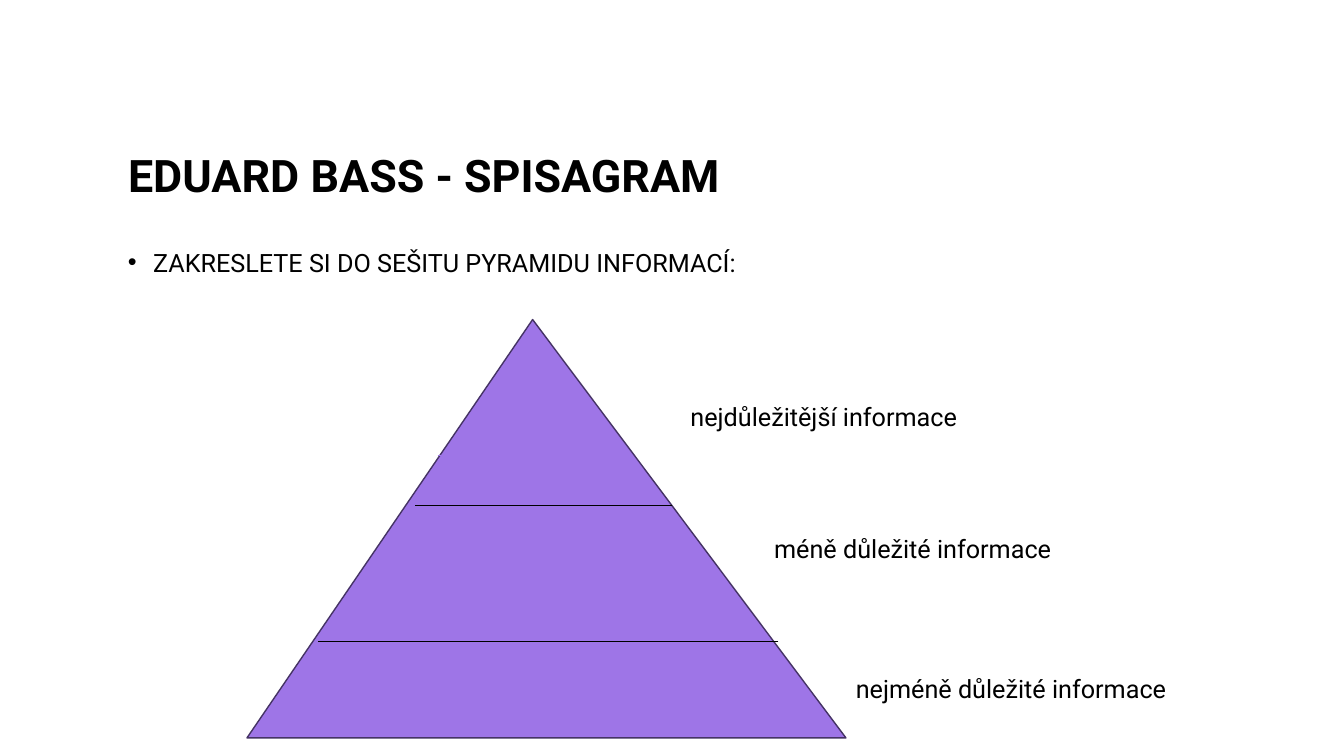
from dataclasses import dataclass

from lxml import etree
from pptx import Presentation
from pptx.dml.color import RGBColor
from pptx.enum import shapes, text
from pptx.oxml import ns
from pptx.util import Inches, Pt


@dataclass(frozen=True)
class Theme:
    font: str = "Roboto"
    ink: str = "000000"
    paper: str = "FFFFFF"
    purple: str = "9E75E7"
    outline: str = "453365"
    title_size: float = 32
    text_size: float = 18
    outline_width: float = 1
    divider_width: float = 0.5


THEME = Theme()


def place(shape, left, top, width, height):
    shape.left, shape.top = Inches(left), Inches(top)
    shape.width, shape.height = Inches(width), Inches(height)


def add_span(para, words, size, bold=False):
    span = para.add_run()
    span.text = words
    span.font.name = THEME.font
    span.font.size = Pt(size)
    span.font.bold = bold
    span.font.color.rgb = RGBColor.from_string(THEME.ink)


def set_title(page, words):
    title = page.shapes.title
    place(title, 1.17, 1.02, 9.72, 1.04)
    frame = title.text_frame
    frame.word_wrap = True
    frame.auto_size = text.MSO_AUTO_SIZE.NONE
    frame.vertical_anchor = text.MSO_ANCHOR.BOTTOM
    para = frame.paragraphs[0]
    para.alignment = text.PP_ALIGN.LEFT
    para.line_spacing = 0.9
    add_span(para, words, THEME.title_size, bold=True)


def add_text(page, words, left, top, width, height):
    box = page.shapes.add_textbox(*map(Inches, (left, top, width, height)))
    box.text_frame.word_wrap = True
    para = box.text_frame.paragraphs[0]
    add_span(para, words, THEME.text_size)
    return box


def add_task(page, words):
    box = add_text(page, words, 1.17, 2.34, 9.72, 4.02)
    para = box.text_frame.paragraphs[0]
    para.line_spacing = 1.2
    para.space_before = Pt(10)
    properties = para._p.get_or_add_pPr()
    properties.set("marL", str(Inches(0.25)))
    properties.set("indent", str(Inches(-0.25)))
    font = etree.SubElement(properties, ns.qn("a:buFont"))
    font.set("typeface", "Arial")
    bullet = etree.SubElement(properties, ns.qn("a:buChar"))
    bullet.set("char", "•")


def add_label(page, words, left, top):
    box = add_text(page, words, left, top, 3.56, 0.4)
    box.text_frame.auto_size = text.MSO_AUTO_SIZE.SHAPE_TO_FIT_TEXT


def add_pyramid(page):
    pyramid = page.shapes.add_shape(
        shapes.MSO_SHAPE.ISOSCELES_TRIANGLE,
        *map(Inches, (2.45, 3.17, 5.94, 4.15)))
    pyramid.adjustments[0] = 0.477
    pyramid.shadow.inherit = False
    pyramid.fill.solid()
    pyramid.fill.fore_color.rgb = RGBColor.from_string(THEME.purple)
    pyramid.line.color.rgb = RGBColor.from_string(THEME.outline)
    pyramid.line.width = Pt(THEME.outline_width)


def add_divider(page, start, end, height, color):
    divider = page.shapes.add_connector(
        shapes.MSO_CONNECTOR.STRAIGHT,
        *map(Inches, (start, height, end, height)))
    divider.line.color.rgb = RGBColor.from_string(color)
    divider.line.width = Pt(THEME.divider_width)
    etree.SubElement(divider._element.spPr, ns.qn("a:effectLst"))


def main():
    deck = Presentation()
    deck.slide_width, deck.slide_height = Inches(13.33), Inches(7.5)
    page = deck.slides.add_slide(deck.slide_layouts.get_by_name("Title Only"))
    page.background.fill.solid()
    page.background.fill.fore_color.rgb = RGBColor.from_string(THEME.paper)

    set_title(page, "EDUARD BASS - SPISAGRAM")
    add_task(page, "ZAKRESLETE SI DO SEŠITU PYRAMIDU INFORMACÍ:")
    add_pyramid(page)
    for start, end, height, color in (
        (4.34, 6.23, 4.52, THEME.purple),
        (4.12, 6.67, 5.01, THEME.ink),
        (7.72, 3.15, 6.36, THEME.ink),
    ):
        add_divider(page, start, end, height, color)
    for words, left, top in (
        ("nejdůležitější informace", 6.75, 3.93),
        ("méně důležité informace", 7.58, 5.24),
        ("nejméně důležité informace", 8.39, 6.63),
    ):
        add_label(page, words, left, top)

    deck.save("out.pptx")


if __name__ == "__main__":
    main()
